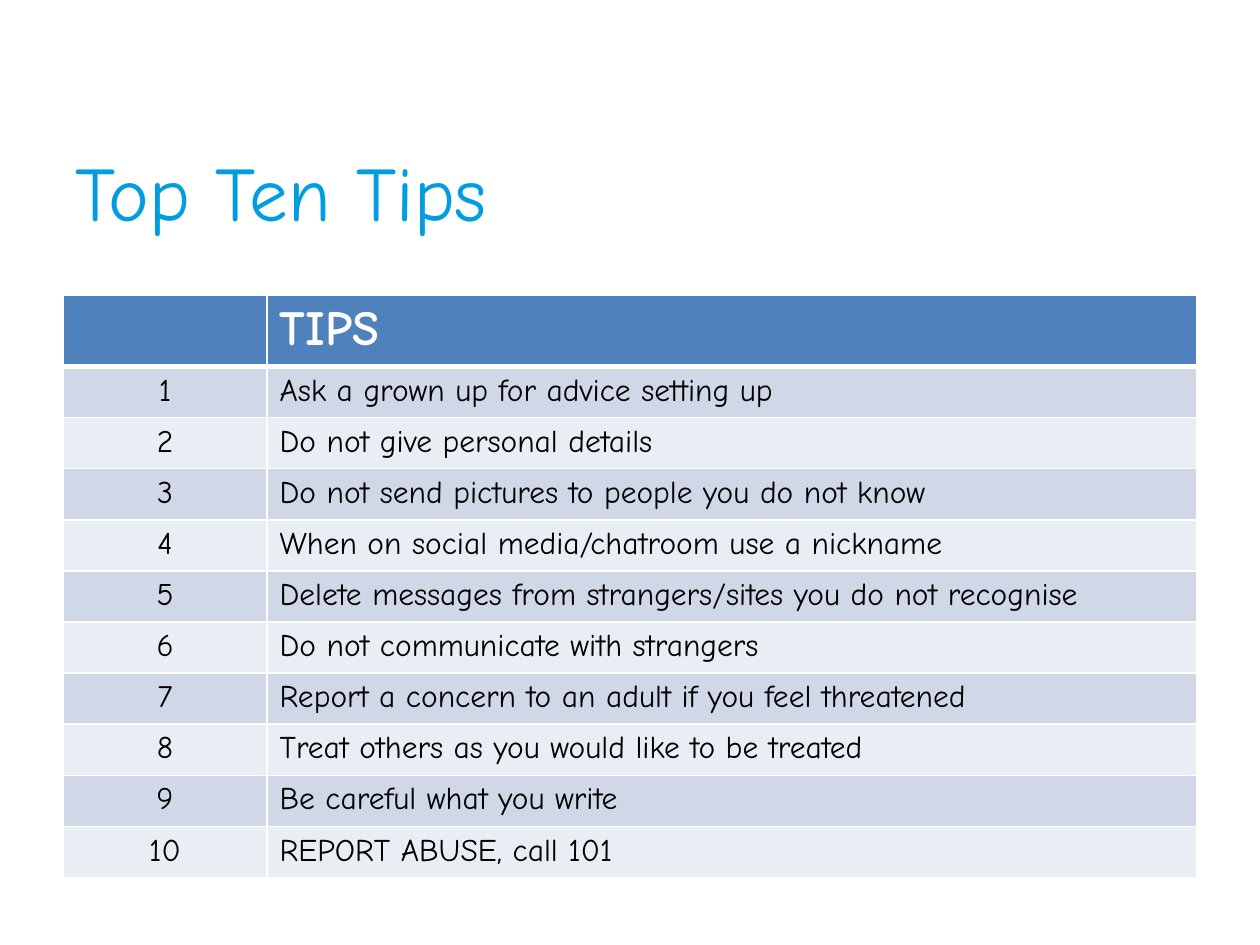
from lxml import etree
from pptx import Presentation
from pptx import util as u
from pptx.dml.color import RGBColor
from pptx.enum import text
from pptx.oxml import ns

FONT = "Comic Neue"
SKY = RGBColor(0x00, 0x9D, 0xE0)
BLUE = RGBColor(0x4F, 0x81, 0xBD)
BAND_DARK = RGBColor(0xD0, 0xD8, 0xE8)
BAND_LIGHT = RGBColor(0xE9, 0xED, 0xF4)
WHITE = RGBColor(0xFF, 0xFF, 0xFF)
BLACK = RGBColor(0x00, 0x00, 0x00)

LEFT, WIDTH = u.Pt(36), u.Pt(648)
COLUMN_WIDTHS = (u.Pt(116.6), u.Pt(531.4))
HEADER_HEIGHT, TIP_HEIGHT = u.Pt(39.4), u.Pt(29.2)

TIPS = [
    "Ask a grown up for advice setting up",
    "Do not give personal details",
    "Do not send pictures to people you do not know",
    "When on social media/chatroom use a nickname",
    "Delete messages from strangers/sites you do not recognise",
    "Do not communicate with strangers",
    "Report a concern to an adult if you feel threatened",
    "Treat others as you would like to be treated",
    "Be careful what you write",
    "REPORT ABUSE, call 101",
]


def write(frame, words, size=18, color=BLACK, bold=False,
          align=text.PP_ALIGN.LEFT):
    paragraph = frame.paragraphs[0]
    paragraph.alignment = align
    run = paragraph.add_run()
    run.text = words
    run.font.name = FONT
    run.font.size = u.Pt(size)
    run.font.bold = bold
    run.font.color.rgb = color


def set_borders(cell, **widths):
    """Draw white borders; widths in points by side, 1 unless given."""
    properties = cell._tc.get_or_add_tcPr()
    for side in "LRTB":
        line = etree.SubElement(properties, ns.qn(f"a:ln{side}"),
                                w=str(u.Pt(widths.get(side, 1))))
        fill = etree.SubElement(line, ns.qn("a:solidFill"))
        etree.SubElement(fill, ns.qn("a:srgbClr"), val=str(WHITE))


def style_cell(cell, color, **widths):
    set_borders(cell, **widths)
    cell.fill.solid()
    cell.fill.fore_color.rgb = color


def add_title(slide, words):
    title = slide.shapes.add_textbox(LEFT, u.Pt(64), WIDTH, u.Pt(90))
    title.text_frame.word_wrap = True
    title.text_frame.vertical_anchor = text.MSO_ANCHOR.MIDDLE
    write(title.text_frame, words, size=44, color=SKY)


def add_tips_table(slide, tips):
    height = HEADER_HEIGHT + TIP_HEIGHT * len(tips)
    table = slide.shapes.add_table(len(tips) + 1, 2, LEFT, u.Pt(168.6),
                                   WIDTH, height).table
    for column, width in zip(table.columns, COLUMN_WIDTHS):
        column.width = width

    # Header row
    table.rows[0].height = HEADER_HEIGHT
    for column in range(2):
        style_cell(table.cell(0, column), BLUE, B=3)
    write(table.cell(0, 1).text_frame, "TIPS", size=28, color=WHITE, bold=True)

    # Numbered tips in alternating bands
    for number, tip in enumerate(tips, start=1):
        table.rows[number].height = TIP_HEIGHT
        number_cell, tip_cell = table.cell(number, 0), table.cell(number, 1)
        for cell in (number_cell, tip_cell):
            style_cell(cell, BAND_DARK if number % 2 else BAND_LIGHT,
                       T=3 if number == 1 else 1)
        write(number_cell.text_frame, str(number), align=text.PP_ALIGN.CENTER)
        write(tip_cell.text_frame, tip)


def main():
    deck = Presentation()
    deck.slide_width, deck.slide_height = u.Pt(720), u.Pt(540)
    slide = deck.slides.add_slide(deck.slide_layouts[6])
    add_title(slide, "Top Ten Tips")
    add_tips_table(slide, TIPS)
    deck.save("out.pptx")


if __name__ == "__main__":
    main()
